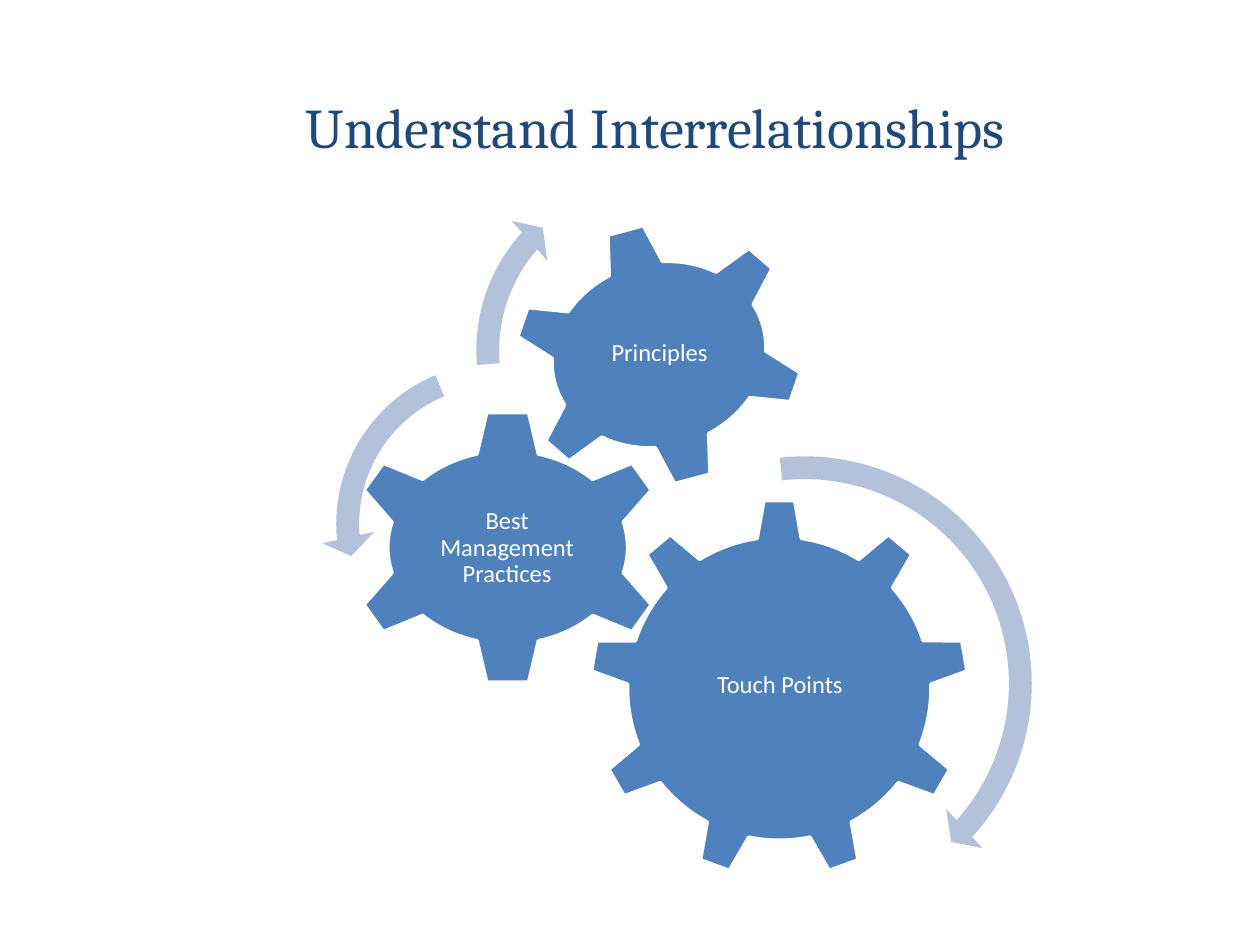
from dataclasses import dataclass

from pptx import Presentation
from pptx.dml.color import RGBColor
from pptx.enum.shapes import MSO_SHAPE
from pptx.enum.text import MSO_ANCHOR, PP_ALIGN
from pptx.shapes.autoshape import Shape
from pptx.shapes.shapetree import GroupShapes, SlideShapes
from pptx.util import Inches, Pt

SLIDE_WIDTH = Inches(10)
SLIDE_HEIGHT = Inches(7.5)
COLORS = {"title": "1F497D", "gear": "4F81BD", "arrow": "B3C1DB", "white": "FFFFFF"}


@dataclass(frozen=True)
class Frame:
    """A box in percent of the slide's width and height."""

    left: float
    top: float
    width: float
    height: float

    def lengths(self) -> tuple[int, int, int, int]:
        return (
            int(SLIDE_WIDTH * self.left / 100),
            int(SLIDE_HEIGHT * self.top / 100),
            int(SLIDE_WIDTH * self.width / 100),
            int(SLIDE_HEIGHT * self.height / 100),
        )


@dataclass(frozen=True)
class Gear:
    label: str
    kind: MSO_SHAPE
    frame: Frame
    label_frame: Frame
    rotation: float = 0


@dataclass(frozen=True)
class TurnArrow:
    """A ring arrow: sizes in percent of its diameter, angles in degrees."""

    kind: MSO_SHAPE
    left: float
    top: float
    diameter: float
    thickness: float
    head_angle: float
    end_angle: float
    start_angle: float
    head_width: float


TITLE_FRAME = Frame(7.05, 5, 90, 16.67)

GEARS = [
    Gear("Touch Points", MSO_SHAPE.GEAR_9,
         Frame(46.8, 52.8, 30.1, 40.13), Frame(52.9, 62.27, 18, 20.67)),
    Gear("Best Management Practices", MSO_SHAPE.GEAR_6,
         Frame(27.5, 43.33, 25.6, 29.2), Frame(33.5, 50.8, 13.5, 14.4)),
    Gear("Principles", MSO_SHAPE.GEAR_6,
         Frame(40.6, 23.6, 23.4, 27.87), Frame(45.9, 29.47, 12.9, 16), rotation=345),
]

ARROWS = [
    TurnArrow(MSO_SHAPE.CIRCULAR_ARROW, 44.6, 46.67, 38.5, 4.7, 4.98, 42.21, 263.77, 5.5),
    TurnArrow(MSO_SHAPE.LEFT_CIRCULAR_ARROW, 25.5, 36.8, 28, 6.5, 7.17, 174.82, 247.3, 7.5),
    TurnArrow(MSO_SHAPE.CIRCULAR_ARROW, 36.6, 16.93, 30.2, 6, 6.57, 221.9, 175.14, 7),
]


def color(name: str) -> RGBColor:
    return RGBColor.from_string(COLORS[name])


def add_label(shapes: SlideShapes | GroupShapes, text: str, frame: Frame,
              font_name: str, size: float, color_name: str, inset: float,
              line_spacing: float = 1.0) -> None:
    text_frame = shapes.add_textbox(*frame.lengths()).text_frame
    text_frame.word_wrap = True
    text_frame.vertical_anchor = MSO_ANCHOR.MIDDLE
    text_frame.margin_left = text_frame.margin_right = Inches(inset)
    text_frame.margin_top = text_frame.margin_bottom = Inches(inset)
    paragraph = text_frame.paragraphs[0]
    paragraph.text = text
    paragraph.alignment = PP_ALIGN.CENTER
    paragraph.line_spacing = line_spacing
    paragraph.font.name = font_name
    paragraph.font.size = Pt(size)
    paragraph.font.color.rgb = color(color_name)


def add_filled_shape(shapes: GroupShapes, kind: MSO_SHAPE, frame: Frame,
                     color_name: str) -> Shape:
    shape = shapes.add_shape(kind, *frame.lengths())
    shape.shadow.inherit = False
    shape.fill.solid()
    shape.fill.fore_color.rgb = color(color_name)
    return shape


def add_gear(shapes: GroupShapes, gear: Gear) -> None:
    shape = add_filled_shape(shapes, gear.kind, gear.frame, "gear")
    shape.rotation = gear.rotation
    shape.line.color.rgb = color("white")
    shape.line.width = Pt(2)
    add_label(shapes, gear.label, gear.label_frame, "Calibri", 14, "white",
              inset=0.02, line_spacing=0.9)


def add_turn_arrow(shapes: GroupShapes, arrow: TurnArrow) -> None:
    height = arrow.diameter * SLIDE_WIDTH / SLIDE_HEIGHT
    frame = Frame(arrow.left, arrow.top, arrow.diameter, height)
    shape = add_filled_shape(shapes, arrow.kind, frame, "arrow")
    shape.line.fill.background()
    # Angles are stored in 1/60000 degree, adjustments in 1/100000.
    angles = (arrow.head_angle, arrow.end_angle, arrow.start_angle)
    values = [arrow.thickness / 100, *(angle * 0.6 for angle in angles),
              arrow.head_width / 100]
    for index, value in enumerate(values):
        shape.adjustments[index] = value


def main() -> None:
    presentation = Presentation()
    presentation.slide_width = SLIDE_WIDTH
    presentation.slide_height = SLIDE_HEIGHT
    slide = presentation.slides.add_slide(presentation.slide_layouts[6])

    add_label(slide.shapes, "Understand Interrelationships", TITLE_FRAME,
              "Cambria", 32, "title", inset=0.05)
    diagram = slide.shapes.add_group_shape().shapes
    for gear in GEARS:
        add_gear(diagram, gear)
    for arrow in ARROWS:
        add_turn_arrow(diagram, arrow)

    presentation.save("out.pptx")


if __name__ == "__main__":
    main()
